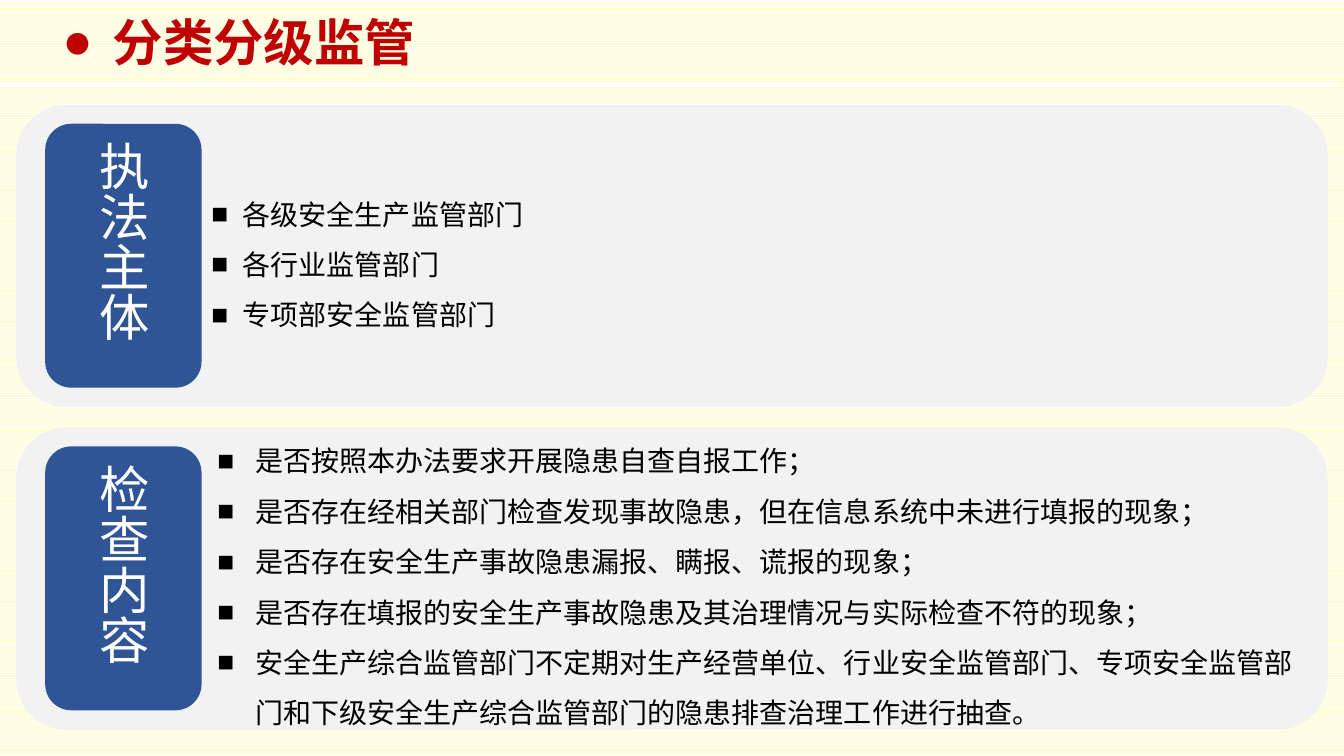
from pptx import Presentation
from pptx.dml.color import RGBColor
from pptx.enum.dml import MSO_PATTERN
from pptx.enum.shapes import MSO_CONNECTOR, MSO_SHAPE
from pptx.enum.text import MSO_ANCHOR, MSO_AUTO_SIZE, PP_ALIGN
from pptx.oxml.ns import qn
from pptx.util import Cm, Pt
from lxml.etree import SubElement

TITLE = "分类分级监管"
PANELS = [
    {"label": "执法主体", "box": (5.08, 4.42, 9.53, 4.06), "hang": 0.79,
     "items": ["各级安全生产监管部门", "各行业监管部门", "专项部安全监管部门"]},
    {"label": "检查内容", "box": (5.23, 10.64, 28.22, 7.87), "hang": 0.95,
     "items": [
         "是否按照本办法要求开展隐患自查自报工作；",
         "是否存在经相关部门检查发现事故隐患，但在信息系统中未进行填报的现象；",
         "是否存在安全生产事故隐患漏报、瞒报、谎报的现象；",
         "是否存在填报的安全生产事故隐患及其治理情况与实际检查不符的现象；",
         "安全生产综合监管部门不定期对生产经营单位、行业安全监管部门、专项安全监管部门"
         "和下级安全生产综合监管部门的隐患排查治理工作进行抽查。"]},
]
TOP, STEP = 2.64, 8.13


def tint(code):
    return RGBColor.from_string(code)


def apply(target, values):
    for name, value in values.items():
        setattr(target, name, value)


class Deck:
    face = "Noto Sans CJK SC"
    head = {"size": Pt(36), "bold": True}
    body = {"size": Pt(20)}
    tag = {"size": Pt(36)}

    def __init__(self):
        self.show = Presentation()
        apply(self.show, {"slide_width": Cm(33.87), "slide_height": Cm(19.05)})
        self.slide = self.show.slides.add_slide(self.show.slide_layouts[6])

    def ground(self, fore, back):
        fill = self.slide.background.fill
        fill.patterned()
        fill.pattern = MSO_PATTERN.LIGHT_HORIZONTAL
        fill.fore_color.rgb = tint(fore)
        fill.back_color.rgb = tint(back)

    def words(self, para, text, style, color):
        run = para.add_run()
        run.text = text
        apply(run.font, {"name": self.face, **style})
        run.font.color.rgb = tint(color)
        SubElement(run.font._element, qn("a:ea"), typeface=self.face)

    def bullets(self, box, items, mark, hang, style, color, gap=1.0):
        frame = self.slide.shapes.add_textbox(*map(Cm, box)).text_frame
        apply(frame, {"word_wrap": True,
                      "auto_size": MSO_AUTO_SIZE.SHAPE_TO_FIT_TEXT})
        for i, text in enumerate(items):
            para = frame.add_paragraph() if i else frame.paragraphs[0]
            para.line_spacing = gap
            props = para._p.get_or_add_pPr()
            props.set("marL", str(Cm(hang)))
            props.set("indent", str(-Cm(hang)))
            SubElement(props, qn("a:buFont"), typeface="Arial")
            SubElement(props, qn("a:buChar"), char=mark)
            self.words(para, text, style, color)

    def card(self, box, color):
        shape = self.slide.shapes.add_shape(
            MSO_SHAPE.ROUNDED_RECTANGLE, *map(Cm, box))
        shape.shadow.inherit = False
        shape.fill.solid()
        shape.fill.fore_color.rgb = tint(color)
        shape.line.fill.background()
        return shape

    def label(self, box, text, color):
        frame = self.card(box, color).text_frame
        apply(frame, {"word_wrap": True, "vertical_anchor": MSO_ANCHOR.MIDDLE})
        frame._txBody.bodyPr.set("vert", "eaVert")
        para = frame.paragraphs[0]
        para.alignment = PP_ALIGN.CENTER
        self.words(para, text, self.tag, "FFFFFF")

    def rule(self, ends, color, width):
        line = self.slide.shapes.add_connector(
            MSO_CONNECTOR.STRAIGHT, *map(Cm, ends))
        line.line.color.rgb = tint(color)
        line.line.width = Pt(width)
        SubElement(line._element.spPr, qn("a:effectLst"))


def main():
    deck = Deck()
    deck.ground("FFFFCC", "FFFFFF")

    # Title and rule
    deck.bullets((1.32, 0.15, 15.6, 1.8), [TITLE], "●", 1.27,
                 deck.head, "C00000")
    deck.rule((0, 2.13, 33.78, 2.13), "FFFFFF", 3)

    # Panels with upright label and list
    for i, panel in enumerate(PANELS):
        top = TOP + i * STEP
        deck.card((0.41, top, 33.05, 7.62), "F2F2F2")
        deck.label((1.14, top + 0.48, 3.94, 6.65), panel["label"], "2F5597")
        deck.bullets(panel["box"], panel["items"], "■", panel["hang"],
                     deck.body, "000000", 1.5)

    deck.show.save("out.pptx")


if __name__ == "__main__":
    main()
